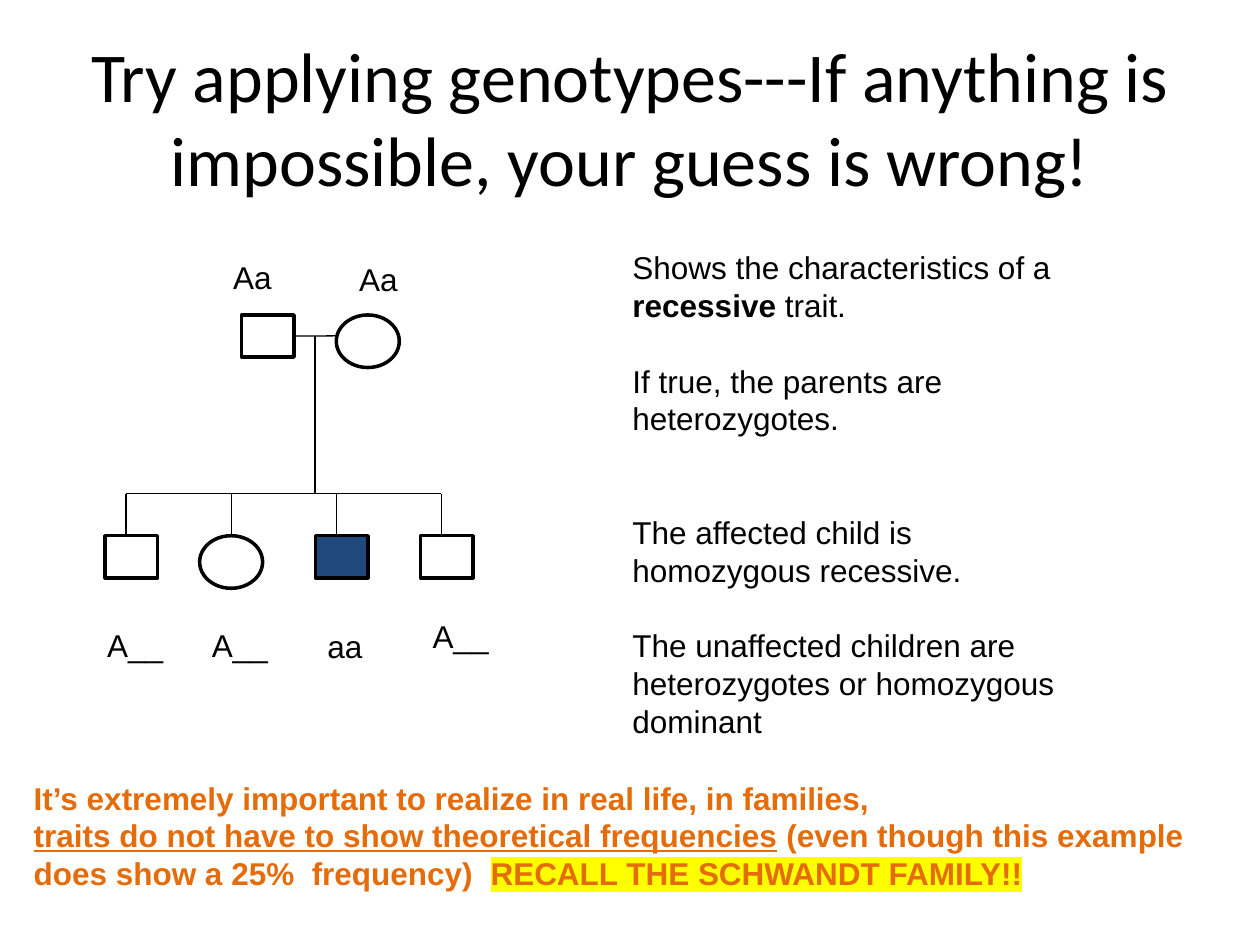
import pptx
import pptx.dml.color
import pptx.enum.shapes
import pptx.enum.text
import pptx.oxml
import pptx.oxml.ns
import pptx.util
from pptx.util import Cm

RGBColor = pptx.dml.color.RGBColor
BLACK = RGBColor(0x00, 0x00, 0x00)
WHITE = RGBColor(0xFF, 0xFF, 0xFF)
NAVY = RGBColor(0x1F, 0x49, 0x7D)
ORANGE = RGBColor(0xE4, 0x6C, 0x0A)
HIGHLIGHT = "FFFF00"

MALE = pptx.enum.shapes.MSO_SHAPE.RECTANGLE
FEMALE = pptx.enum.shapes.MSO_SHAPE.OVAL
SYMBOL_SIZE = {MALE: (1.06, 0.85), FEMALE: (1.27, 1.06)}

BODY_FORMAT = {"name": "Arial", "size": pptx.util.Pt(18)}
LINE_HEIGHT = 21.6  # points


def format_run(run, color, **values):
    for attribute, value in values.items():
        setattr(run.font, attribute, value)
    run.font.color.rgb = color


def highlight_run(run):
    """Put a highlight right after the fill of the run."""
    properties = run.font._element
    mark = pptx.oxml.parse_xml(
        f'<a:highlight {pptx.oxml.ns.nsdecls("a")}><a:srgbClr val="{HIGHLIGHT}"/></a:highlight>')
    properties.find(pptx.oxml.ns.qn("a:solidFill")).addnext(mark)


def add_text(slide, left, top, width, height, paragraphs, color=BLACK, wrap=True):
    """Each paragraph is (lines of gap before it, [(text, format values), ...])."""
    frame = slide.shapes.add_textbox(Cm(left), Cm(top), Cm(width), Cm(height)).text_frame
    frame.word_wrap = wrap
    for index, (gap, runs) in enumerate(paragraphs):
        paragraph = frame.paragraphs[0] if index == 0 else frame.add_paragraph()
        paragraph.line_spacing = pptx.util.Pt(LINE_HEIGHT)
        paragraph.space_before = pptx.util.Pt(gap * LINE_HEIGHT)
        for text, values in runs:
            values = dict(values)
            marked = values.pop("highlight", False)
            run = paragraph.add_run()
            run.text = text
            format_run(run, color, **BODY_FORMAT, **values)
            if marked:
                highlight_run(run)


def add_symbol(slide, kind, left, top, color=WHITE):
    width, height = SYMBOL_SIZE[kind]
    shape = slide.shapes.add_shape(kind, Cm(left), Cm(top), Cm(width), Cm(height))
    shape.shadow.inherit = False
    shape.fill.solid()
    shape.fill.fore_color.rgb = color
    shape.line.color.rgb = BLACK
    shape.line.width = pptx.util.Pt(2)
    return shape


def add_line(slide, start_x, start_y, end_x, end_y):
    line = slide.shapes.add_connector(
        pptx.enum.shapes.MSO_CONNECTOR.STRAIGHT,
        Cm(start_x), Cm(start_y), Cm(end_x), Cm(end_y))
    line.line.color.rgb = BLACK
    line.line.width = pptx.util.Pt(0.75)
    line._element.spPr.append(
        pptx.oxml.parse_xml(f'<a:effectLst {pptx.oxml.ns.nsdecls("a")}/>'))
    return line


def add_title(slide, left, top, width, height):
    title = slide.shapes.title
    box = {"left": left, "top": top, "width": width, "height": height}
    for attribute, value in box.items():
        setattr(title, attribute, Cm(value))
    frame = title.text_frame
    frame.auto_size = pptx.enum.text.MSO_AUTO_SIZE.NONE
    frame.vertical_anchor = pptx.enum.text.MSO_ANCHOR.MIDDLE
    paragraph = frame.paragraphs[0]
    paragraph.alignment = pptx.enum.text.PP_ALIGN.CENTER
    run = paragraph.add_run()
    run.text = "Try applying genotypes---If anything is impossible, your guess is wrong!"
    format_run(run, BLACK, name="Calibri", size=pptx.util.Pt(40))


def add_pedigree(slide, left, top):
    parent_top = top + 1.27
    marriage_y = top + 1.69
    sibling_y = top + 4.87
    child_top = top + 5.72
    descent_x = left + 4.23
    pitch = 2.12
    first_x = left + 0.42

    # Parents and the line between them
    father = add_symbol(slide, MALE, left + 2.75, parent_top)
    mother = add_symbol(slide, FEMALE, left + 4.66, parent_top)
    marriage = add_line(slide, left + 3.81, marriage_y, mother.left.cm, marriage_y)
    marriage.begin_connect(father, 3)

    # Descent and sibling lines
    add_line(slide, descent_x, marriage_y, descent_x, sibling_y)
    add_line(slide, first_x, sibling_y, first_x + 3 * pitch, sibling_y)

    # Children; a circle is centred on its line
    children = [(MALE, WHITE), (FEMALE, WHITE), (MALE, NAVY), (MALE, WHITE)]
    for index, (kind, color) in enumerate(children):
        line_x = first_x + index * pitch
        add_line(slide, line_x, child_top, line_x, sibling_y)
        offset = 0.42 if kind == MALE else SYMBOL_SIZE[FEMALE][0] / 2
        add_symbol(slide, kind, line_x - offset, child_top, color)

    # Genotypes
    genotypes = [("Aa", 2.33, 0, 2.12), ("Aa", 4.87, 0.03, 2.12),
                 ("A__", -0.21, 7.42, 1.9), ("A__", 1.9, 7.42, 1.9),
                 ("aa", 4.23, 7.44, 1.27), ("A__", 6.35, 7.24, 1.9)]
    for text, x, y, width in genotypes:
        add_text(slide, left + x, top + y, width, 1.02, [(0, [(text, {})])])


def add_explanation(slide, left, top, width, height):
    add_text(slide, left, top, width, height, [
        (0, [("Shows the characteristics of a ", {}), ("recessive ", {"bold": True}),
             ("trait.", {})]),
        (1, [("If true, the parents are heterozygotes.", {})]),
        (2, [("The affected child is homozygous recessive.", {})]),
        (1, [("The unaffected children are heterozygotes or homozygous dominant", {})]),
    ])


def add_reminder(slide, left, top, width, height):
    bold = {"bold": True}
    add_text(slide, left, top, width, height, [
        (0, [("It’s extremely important to realize in real life, in families,", bold)]),
        (0, [("traits do not have to show theoretical frequencies",
              {"bold": True, "underline": True}),
             (" (even though this example", bold)]),
        (0, [("does show a 25%  frequency)  ", bold),
             ("RECALL THE SCHWANDT FAMILY!!", {"bold": True, "highlight": True})]),
    ], color=ORANGE, wrap=False)


def main():
    presentation = pptx.Presentation()
    presentation.slide_width = Cm(25.4)
    presentation.slide_height = Cm(19.05)
    slide = presentation.slides.add_slide(presentation.slide_layouts[5])
    add_title(slide, 1.27, 0.76, 22.86, 3.18)
    add_pedigree(slide, 2.12, 5.08)
    add_explanation(slide, 12.5, 4.88, 9.73, 11.02)
    add_reminder(slide, 0.43, 15.57, 24.1, 2.57)
    presentation.save("out.pptx")


if __name__ == "__main__":
    main()
